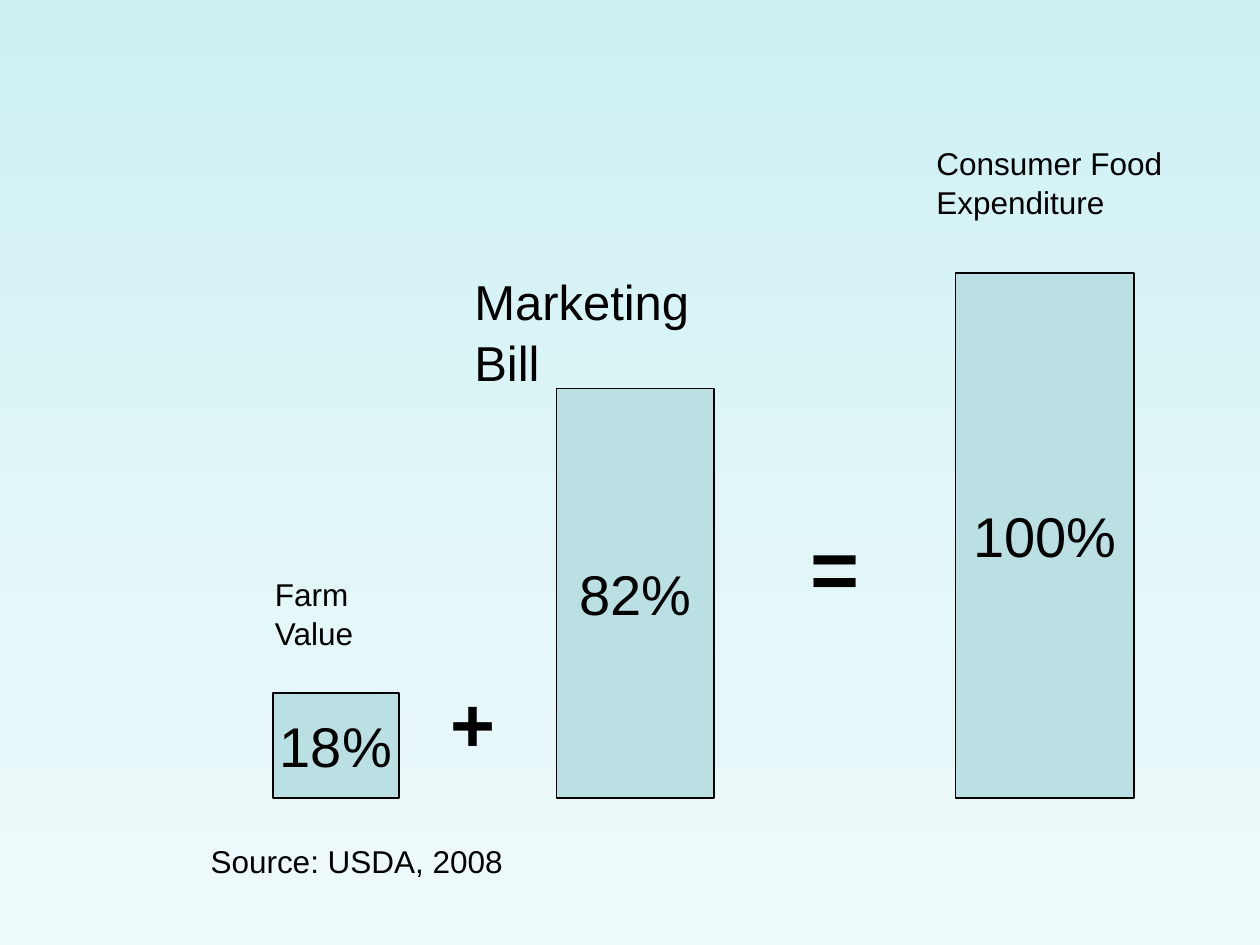
import pptx
import pptx.dml.color
import pptx.enum.shapes
import pptx.enum.text
import pptx.util

EMU_PER_PX = 9525  # 96 px to the inch
BASELINE = 608


def px(length):
    return pptx.util.Emu(length * EMU_PER_PX)


def color(hex_code):
    return pptx.dml.color.RGBColor.from_string(hex_code)


deck = pptx.Presentation()
deck.slide_width, deck.slide_height = px(960), px(720)
page = deck.slides.add_slide(deck.slide_layouts[6])

background = page.background.fill
background.gradient()
background.gradient_angle = 270
for stop, position, shade in zip(background.gradient_stops, (0, 1), ("CEF1F4", "EFFAFB")):
    stop.position = position
    stop.color.rgb = color(shade)

# Bars standing on one baseline: share, left, width, height
bars = [
    ("18%", 208, 96, 80),
    ("82%", 424, 120, 312),
    ("100%", 728, 136, 400),
]
for share, left, width, height in bars:
    bar = page.shapes.add_shape(
        pptx.enum.shapes.MSO_SHAPE.RECTANGLE,
        px(left), px(BASELINE - height), px(width), px(height))
    bar.shadow.inherit = False
    bar.fill.solid()
    bar.fill.fore_color.rgb = color("BBE0E3")
    bar.line.color.rgb = color("000000")
    bar.line.width = pptx.util.Pt(0.75)
    frame = bar.text_frame
    frame.word_wrap = False
    frame.vertical_anchor = pptx.enum.text.MSO_ANCHOR.MIDDLE
    para = frame.paragraphs[0]
    para.text = share
    para.alignment = pptx.enum.text.PP_ALIGN.CENTER
    para.font.name = "Arial"
    para.font.size = pptx.util.Pt(32)
    para.font.color.rgb = color("000000")

# Labels and operators: lines, left, top, width, height, size, bold
labels = [
    (["Farm", "Value"], 200, 432, 96, 86, 18, False),
    (["+"], 334, 507, 53, 80, 44, True),
    (["Marketing Bill"], 352, 200, 240, 55, 28, False),
    (["="], 608, 385, 56, 86, 48, True),
    (["Consumer Food", "Expenditure"], 704, 104, 232, 86, 18, False),
    (["Source: USDA, 2008"], 151, 636, 293, 48, 18, False),
]
for lines, left, top, width, height, size, bold in labels:
    box = page.shapes.add_textbox(px(left), px(top), px(width), px(height))
    frame = box.text_frame
    frame.word_wrap = True
    frame.text = "\n".join(lines)
    for para in frame.paragraphs:
        para.line_spacing = 1.04
        para.font.name = "Arial"
        para.font.size = pptx.util.Pt(size)
        para.font.bold = bold
        para.font.color.rgb = color("000000")

deck.save("out.pptx")
